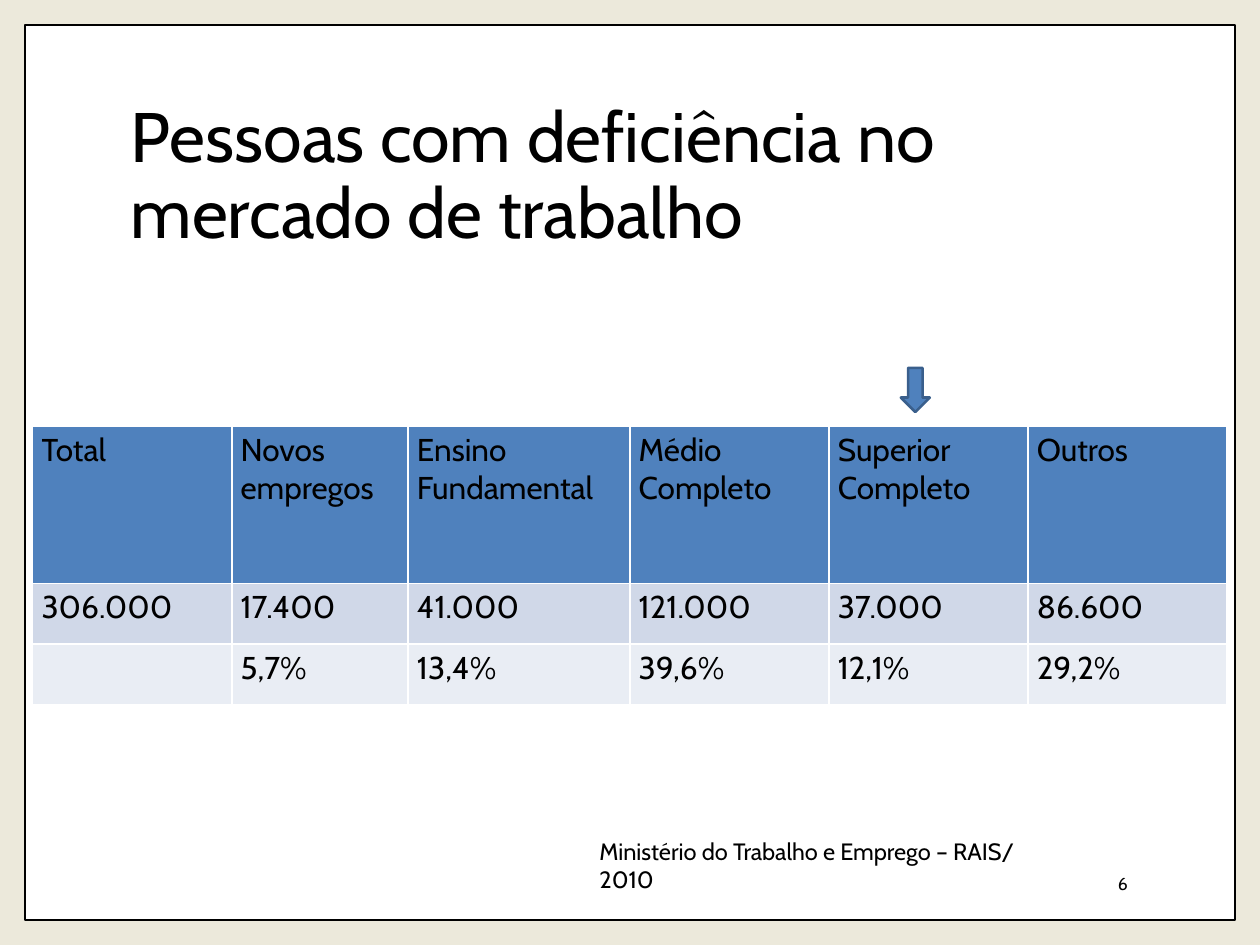
import pptx
import pptx.dml.color
import pptx.enum.shapes
import pptx.enum.text
import pptx.oxml
import pptx.oxml.ns
import pptx.util
from pptx.util import Inches

SHAPE = pptx.enum.shapes.MSO_SHAPE
ALIGN = pptx.enum.text.PP_ALIGN
ANCHOR = pptx.enum.text.MSO_ANCHOR

ROWS = [
    ["Total", "Novos empregos", "Ensino Fundamental", "Médio Completo",
     "Superior Completo", "Outros"],
    ["306.000", "17.400", "41.000", "121.000", "37.000", "86.600"],
    ["", "5,7%", "13,4%", "39,6%", "12,1%", "29,2%"],
]
WIDTHS = [1.58, 1.4, 1.76, 1.58, 1.58, 1.58]
HEIGHTS = [1.25, 0.48, 0.48]
FILLS = ["4F81BD", "D0D8E8", "E9EDF4"]


def color(code):
    return pptx.dml.color.RGBColor.from_string(code)


def paint(fill, code):
    fill.solid()
    fill.fore_color.rgb = color(code)


def edge(cell, code, width):
    """Draw all four borders of a cell, ahead of its fill in the XML."""
    props = cell._tc.get_or_add_tcPr()
    for index, side in enumerate("LRTB"):
        props.insert(index, pptx.oxml.parse_xml(
            f'<a:ln{side} {pptx.oxml.ns.nsdecls("a")} w="{pptx.util.Pt(width)}">'
            f'<a:solidFill><a:srgbClr val="{code}"/></a:solidFill></a:ln{side}>'))


class Deck:
    """Holds the text style and the current slide."""
    face = "Cabin"
    ink = "000000"

    def __init__(self, slide):
        self.slide = slide

    def style(self, para, size):
        para.font.name = self.face
        para.font.size = pptx.util.Pt(size)
        para.font.color.rgb = color(self.ink)

    def shape(self, kind, box, fill, line, width):
        shape = self.slide.shapes.add_shape(kind, *map(Inches, box))
        shape.shadow.inherit = False
        paint(shape.fill, fill)
        shape.line.color.rgb = color(line)
        shape.line.width = pptx.util.Pt(width)

    def text(self, words, box, size, anchor=ANCHOR.MIDDLE, align=ALIGN.LEFT,
             space=1.0):
        frame = self.slide.shapes.add_textbox(*map(Inches, box)).text_frame
        frame.word_wrap = True
        frame.vertical_anchor = anchor
        para = frame.paragraphs[0]
        para.text = words
        para.alignment = align
        para.line_spacing = space
        self.style(para, size)

    def table(self, rows, left, top, size):
        box = left, top, sum(WIDTHS), sum(HEIGHTS)
        table = self.slide.shapes.add_table(
            len(rows), len(WIDTHS), *map(Inches, box)).table
        for col, width in zip(table.columns, WIDTHS):
            col.width = Inches(width)
        for r, row in enumerate(rows):
            table.rows[r].height = Inches(HEIGHTS[r])
            for c, words in enumerate(row):
                cell = table.cell(r, c)
                cell.margin_left = cell.margin_right = Inches(0.07)
                cell.margin_top = cell.margin_bottom = Inches(0.04)
                paint(cell.fill, FILLS[r])
                edge(cell, "FFFFFF", 1)
                para = cell.text_frame.paragraphs[0]
                para.text = words
                self.style(para, size)
                para.font.bold = False


def main():
    show = pptx.Presentation()
    show.slide_width, show.slide_height = Inches(10), Inches(7.5)
    slide = show.slides.add_slide(show.slide_layouts[6])
    paint(slide.background.fill, "ECE9DB")
    deck = Deck(slide)
    deck.shape(SHAPE.RECTANGLE, (0.2, 0.2, 9.6, 7.1), "FFFFFF", "000000", 1)
    deck.text("Pessoas com deficiência no mercado de trabalho",
              (0.94, 0.67, 8.1, 1.48), 40, space=0.9)
    deck.table(ROWS, 0.26, 3.38, 18)
    deck.text("6", (7.65, 6.81, 1.4, 0.4), 10, align=ALIGN.RIGHT)
    deck.text("Ministério do Trabalho e Emprego – RAIS/ 2010",
              (4.66, 6.59, 3.84, 0.33), 13.5, anchor=ANCHOR.TOP)
    deck.shape(SHAPE.DOWN_ARROW, (7.15, 2.92, 0.23, 0.35),
               "4F81BD", "3A5F8C", 1.5)
    show.save("out.pptx")


if __name__ == "__main__":
    main()
